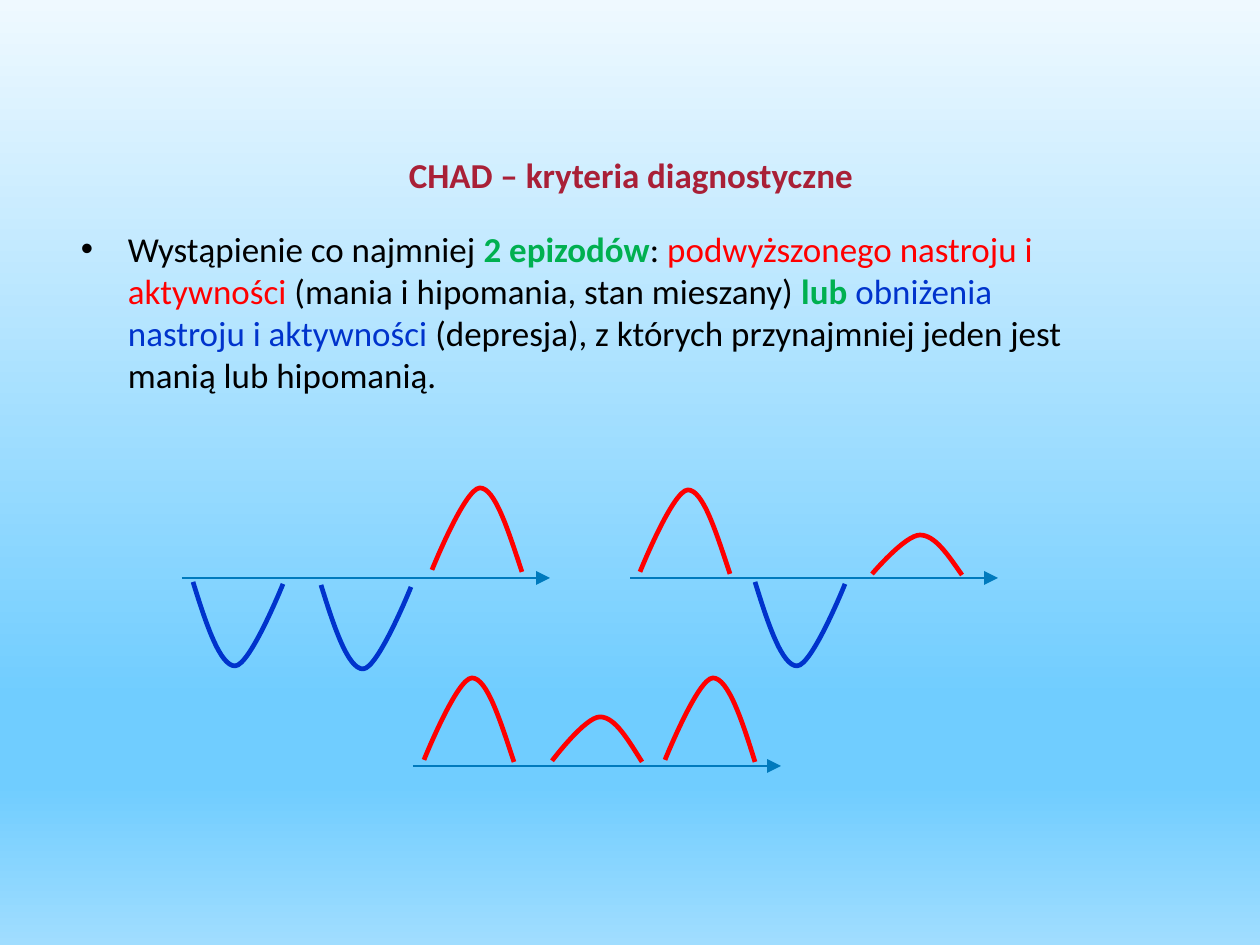
from lxml import etree
from pptx import Presentation
from pptx.dml.color import RGBColor
from pptx.enum.shapes import MSO_CONNECTOR
from pptx.enum.text import MSO_ANCHOR, PP_ALIGN
from pptx.oxml.ns import qn
from pptx.util import Pt

PX = 914400 / 168
STRAIGHT = MSO_CONNECTOR.STRAIGHT
TOP, MIDDLE = MSO_ANCHOR.TOP, MSO_ANCHOR.MIDDLE
LEFT, CENTER = PP_ALIGN.LEFT, PP_ALIGN.CENTER

COLORS = {
    "title": "A92037",
    "text": "000000",
    "accent": "00B050",
    "mania": "FF0000",
    "depression": "0033CC",
    "axis": "007ABD",
}
BACKGROUND_STOPS = [(0, "EFF9FF"), (74, "70CDFF"), (83, "70CDFF"), (100, "A0DDFF")]

TITLE_RUNS = [("CHAD – kryteria diagnostyczne", "title", True)]
CRITERIA_RUNS = [
    ("Wystąpienie co najmniej ", "text", False),
    ("2 epizodów", "accent", True),
    (": ", "text", False),
    ("podwyższonego nastroju i aktywności ", "mania", False),
    ("(mania i hipomania, stan mieszany) ", "text", False),
    ("lub ", "accent", True),
    ("obniżenia nastroju i aktywności ", "depression", False),
    ("(depresja), z których przynajmniej jeden jest manią lub hipomanią.", "text", False),
]

AXIS_LENGTH = 368
EPISODE_WIDTH = 90
EPISODE_CURVE = [(0.15, 0.5), (0.3, 1), (0.47, 1), (0.63, 1), (1, 0), (1, 0)]
EPISODE_CURVE = [(0.15, 0.5), (0.3, 1), (0.47, 1), (0.63, 1), (1, 0.02), (1, 0.02)]
TIMELINES = [
    (182, 578, [(11, 4, 84), (139, 7, 84), (250, -6, -84)]),
    (630, 578, [(10, -4, -84), (125, 4, 84), (242, -3, -40)]),
    (413, 766, [(11, -4, -84), (139, -4, -45), (252, -4, -84)]),
]


def px(value):
    return round(value * PX)


def color(name):
    return RGBColor.from_string(COLORS[name])


def set_background(slide):
    fill = slide.background.fill
    fill.gradient()
    fill.gradient_angle = 270
    stops = slide.element.find(".//" + qn("a:gsLst"))
    for stop in list(stops):
        stops.remove(stop)
    for position, value in BACKGROUND_STOPS:
        stop = etree.SubElement(stops, qn("a:gs"), pos=str(position * 1000))
        etree.SubElement(stop, qn("a:srgbClr"), val=value)


def add_text(slide, box, runs, anchor, alignment):
    shape = slide.shapes.add_textbox(*map(px, box))
    frame = shape.text_frame
    frame_format = {
        "word_wrap": True,
        "vertical_anchor": anchor,
        "margin_left": px(17),
        "margin_right": px(17),
        "margin_top": px(8),
        "margin_bottom": px(8),
    }
    for name, value in frame_format.items():
        setattr(frame, name, value)
    paragraph = frame.paragraphs[0]
    paragraph.alignment = alignment
    for text, color_name, bold in runs:
        run = paragraph.add_run()
        run.text = text
        for name, value in {"name": "Calibri", "size": Pt(15), "bold": bold}.items():
            setattr(run.font, name, value)
        run.font.color.rgb = color(color_name)
    return paragraph


def add_criteria(slide, box):
    paragraph = add_text(slide, box, CRITERIA_RUNS, TOP, LEFT)
    properties = paragraph._p.get_or_add_pPr()
    properties.set("marL", str(px(47)))
    properties.set("indent", str(px(-47)))
    etree.SubElement(properties, qn("a:buFont"), typeface="Arial")
    etree.SubElement(properties, qn("a:buChar"), char="•")


def add_axis(slide, left, top):
    axis = slide.shapes.add_connector(
        STRAIGHT, px(left), px(top), px(left + AXIS_LENGTH), px(top))
    axis.line.color.rgb = color("axis")
    axis.line.width = Pt(0.75)
    etree.SubElement(axis.line._get_or_add_ln(), qn("a:tailEnd"), type="triangle")
    etree.SubElement(axis._element.spPr, qn("a:effectLst"))


def add_episode(slide, left, base, height):
    rising = height < 0
    start = left + EPISODE_WIDTH if rising else left
    direction = -1 if rising else 1
    builder = slide.shapes.build_freeform(start, base, scale=PX)
    builder.add_line_segments(
        [(start + direction * EPISODE_WIDTH * x, base + height * y)
         for x, y in EPISODE_CURVE], close=False)
    shape = builder.convert_to_shape()
    outline = shape._element.find(".//" + qn("a:path"))
    segments = outline.findall(qn("a:lnTo"))
    for first in range(0, len(segments), 3):
        curve = etree.SubElement(outline, qn("a:cubicBezTo"))
        for segment in segments[first:first + 3]:
            curve.append(segment[0])
            outline.remove(segment)
    shape.shadow.inherit = False
    shape.fill.background()
    shape.line.color.rgb = color("mania" if rising else "depression")
    shape.line.width = Pt(2)


def add_timeline(slide, left, top, episodes):
    add_axis(slide, left, top)
    for offset, gap, height in episodes:
        add_episode(slide, left + offset, top + gap, height)


def main():
    presentation = Presentation()
    presentation.slide_width = px(1260)
    presentation.slide_height = px(945)
    slide = presentation.slides.add_slide(presentation.slide_layouts[6])
    set_background(slide)
    add_text(slide, (64, 129, 1134, 92), TITLE_RUNS, MIDDLE, CENTER)
    add_criteria(slide, (64, 220, 1028, 284))
    for left, top, episodes in TIMELINES:
        add_timeline(slide, left, top, episodes)
    presentation.save("out.pptx")


if __name__ == "__main__":
    main()
